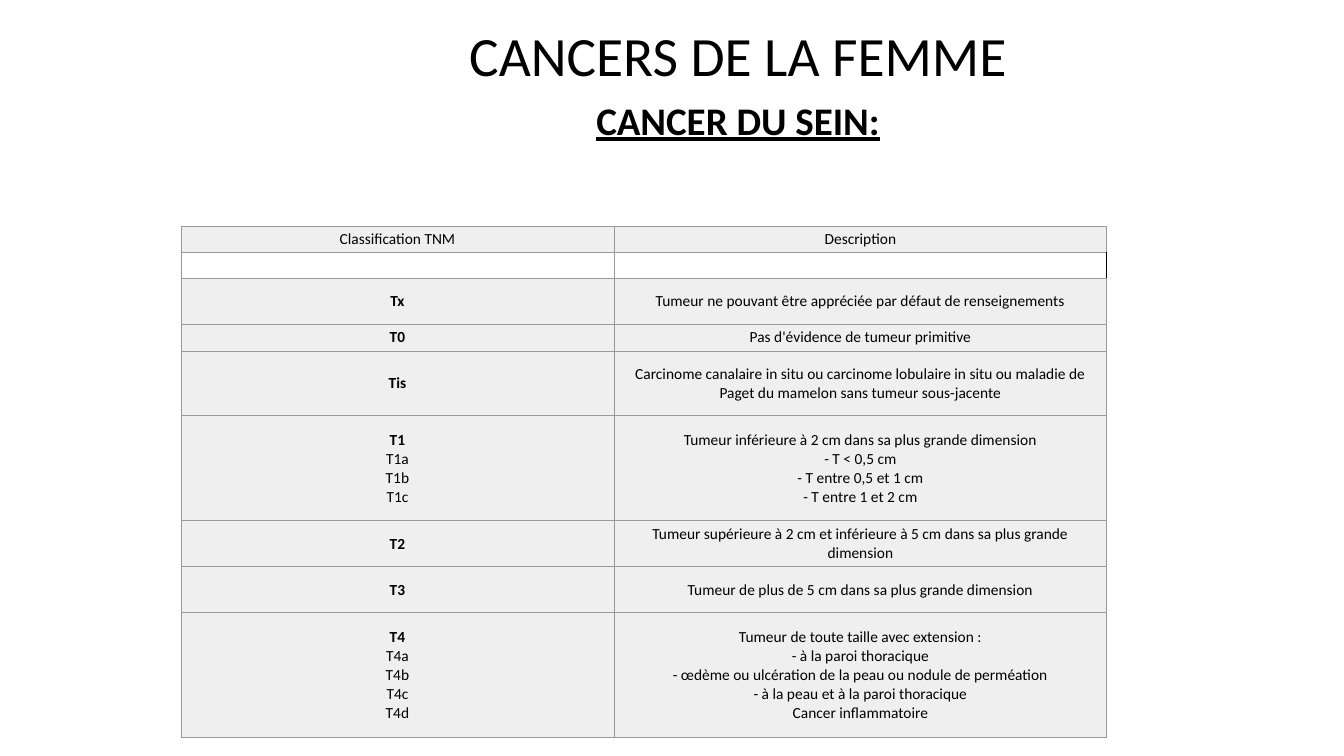
from lxml import etree
from pptx import Presentation
from pptx.dml.color import RGBColor
from pptx.enum.text import MSO_ANCHOR, PP_ALIGN
from pptx.oxml.ns import qn
from pptx.util import Pt

CENTER = PP_ALIGN.CENTER
TOP = MSO_ANCHOR.TOP
MIDDLE = MSO_ANCHOR.MIDDLE
TITLE_ONLY = 5

SLIDE_WIDTH, SLIDE_HEIGHT = 1344, 756
EMU_PER_PX = 12192000 / SLIDE_WIDTH
FONT = "Calibri"
BLACK, WHITE, GREY, RULE = "000000", "FFFFFF", "EFEFEF", "999999"
CELL_SIZE = 11

COLUMN_WIDTHS = [433, 493]
CLASSIFICATION = [
    (26, ["Classification TNM"], ["Description"]),
    (26, [], []),
    (46, ["Tx"], ["Tumeur ne pouvant être appréciée par défaut de renseignements"]),
    (27, ["T0"], ["Pas d'évidence de tumeur primitive"]),
    (65, ["Tis"], ["Carcinome canalaire in situ ou carcinome lobulaire in situ "
                   "ou maladie de Paget du mamelon sans tumeur sous-jacente"]),
    (105, ["T1", "T1a", "T1b", "T1c"],
     ["Tumeur inférieure à 2 cm dans sa plus grande dimension",
      "- T < 0,5 cm", "- T entre 0,5 et 1 cm", "- T entre 1 et 2 cm"]),
    (46, ["T2"], ["Tumeur supérieure à 2 cm et inférieure à 5 cm "
                  "dans sa plus grande dimension"]),
    (46, ["T3"], ["Tumeur de plus de 5 cm dans sa plus grande dimension"]),
    (125, ["T4", "T4a", "T4b", "T4c", "T4d"],
     ["Tumeur de toute taille avec extension :",
      "- à la paroi thoracique",
      "- œdème ou ulcération de la peau ou nodule de perméation",
      "- à la peau et à la paroi thoracique",
      "Cancer inflammatoire"]),
]


def px(length):
    return round(length * EMU_PER_PX)


def color(value):
    return RGBColor.from_string(value)


def add_run(paragraph, text, size, bold=False, underline=False):
    run = paragraph.add_run()
    run.text = text
    run.font.name = FONT
    run.font.size = Pt(size)
    run.font.bold = bold
    run.font.underline = underline
    run.font.color.rgb = color(BLACK)


def write_title(title):
    title.left, title.top = px(223), px(29)
    title.width, title.height = px(1030), px(180)
    frame = title.text_frame
    frame.word_wrap = True
    frame.vertical_anchor = TOP
    frame.margin_left = frame.margin_right = 0
    frame.margin_top = frame.margin_bottom = 0
    heading = frame.paragraphs[0]
    add_run(heading, "CANCERS DE LA FEMME", 39.6)
    subheading = frame.add_paragraph()
    add_run(subheading, "CANCER DU SEIN:", 27.9, bold=True, underline=True)
    for paragraph in (heading, subheading):
        paragraph.alignment = CENTER
        paragraph.line_spacing = 0.9
        paragraph.space_before = Pt(0)
    subheading.space_before = Pt(9)


def set_borders(cell, right):
    properties = cell._tc.get_or_add_tcPr()
    for side, value in (("L", RULE), ("R", right), ("T", RULE), ("B", RULE)):
        border = etree.SubElement(properties, qn(f"a:ln{side}"), w=str(Pt(0.75)))
        fill = etree.SubElement(border, qn("a:solidFill"))
        etree.SubElement(fill, qn("a:srgbClr"), val=value)


def write_cell(cell, lines, bold_first, right_border):
    set_borders(cell, right_border)
    cell.fill.solid()
    cell.fill.fore_color.rgb = color(GREY if lines else WHITE)
    cell.vertical_anchor = MIDDLE
    cell.margin_left = cell.margin_right = px(6)
    cell.margin_top = cell.margin_bottom = px(3)
    paragraph = cell.text_frame.paragraphs[0]
    paragraph.alignment = CENTER
    for index, line in enumerate(lines):
        if index:
            paragraph.add_line_break()
        add_run(paragraph, line, CELL_SIZE, bold=bold_first and index == 0)
    for line_break in paragraph._p.findall(qn("a:br")):
        etree.SubElement(line_break, qn("a:rPr"), sz=str(CELL_SIZE * 100))
    if not lines:
        paragraph._p.get_or_add_endParaRPr().set("sz", str(CELL_SIZE * 100))


def add_classification(slide):
    height = sum(row[0] for row in CLASSIFICATION)
    table = slide.shapes.add_table(
        len(CLASSIFICATION), len(COLUMN_WIDTHS),
        px(181), px(226), px(sum(COLUMN_WIDTHS)), px(height)).table
    table.first_row = False
    table.horz_banding = False
    for column, width in zip(table.columns, COLUMN_WIDTHS):
        column.width = px(width)
    for index, (row_height, stage, description) in enumerate(CLASSIFICATION):
        table.rows[index].height = px(row_height)
        write_cell(table.cell(index, 0), stage, index > 0, RULE)
        write_cell(table.cell(index, 1), description, False,
                   RULE if description else BLACK)


def main():
    deck = Presentation()
    deck.slide_width, deck.slide_height = px(SLIDE_WIDTH), px(SLIDE_HEIGHT)
    slide = deck.slides.add_slide(deck.slide_layouts[TITLE_ONLY])
    write_title(slide.shapes.title)
    add_classification(slide)
    deck.save("out.pptx")


if __name__ == "__main__":
    main()
